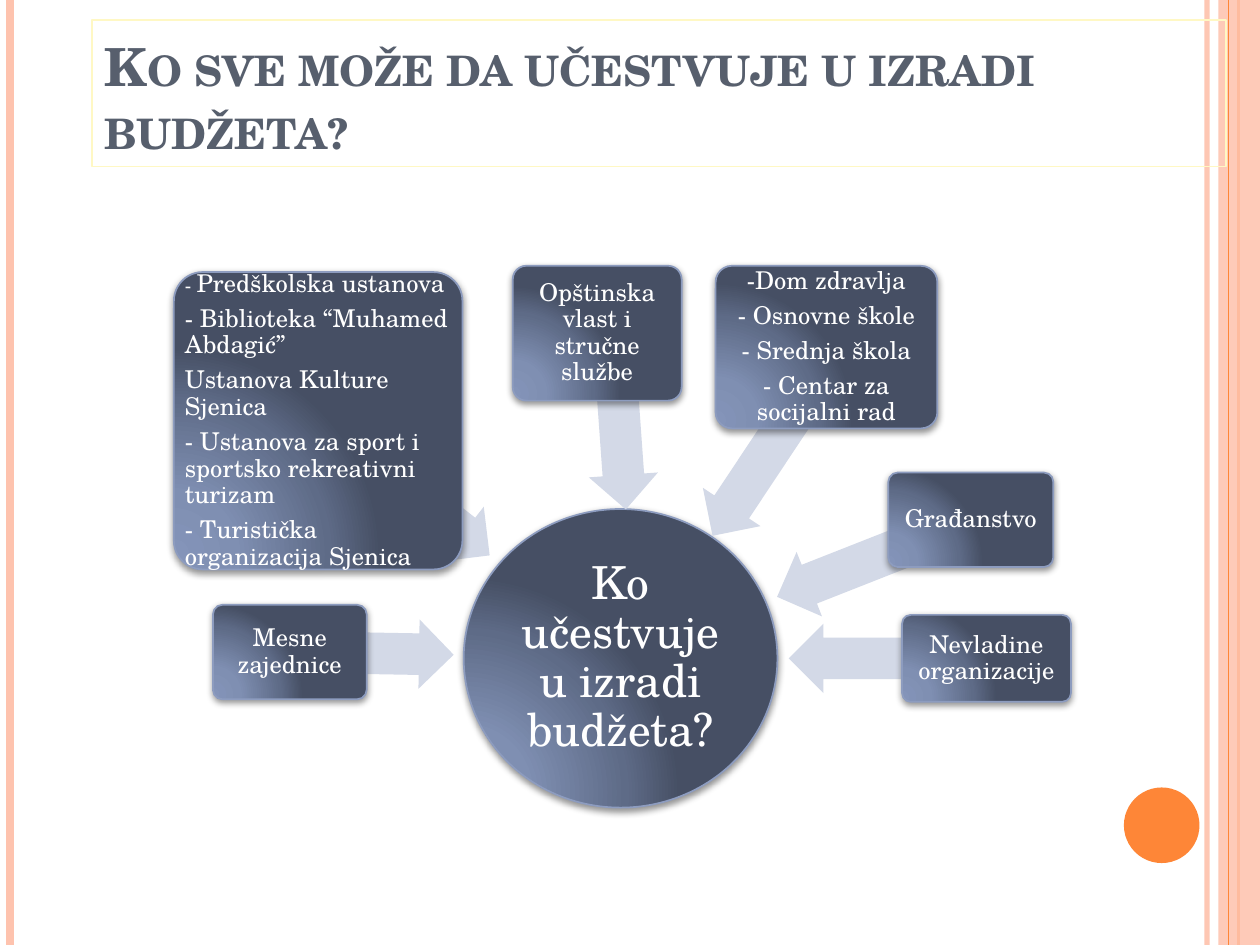
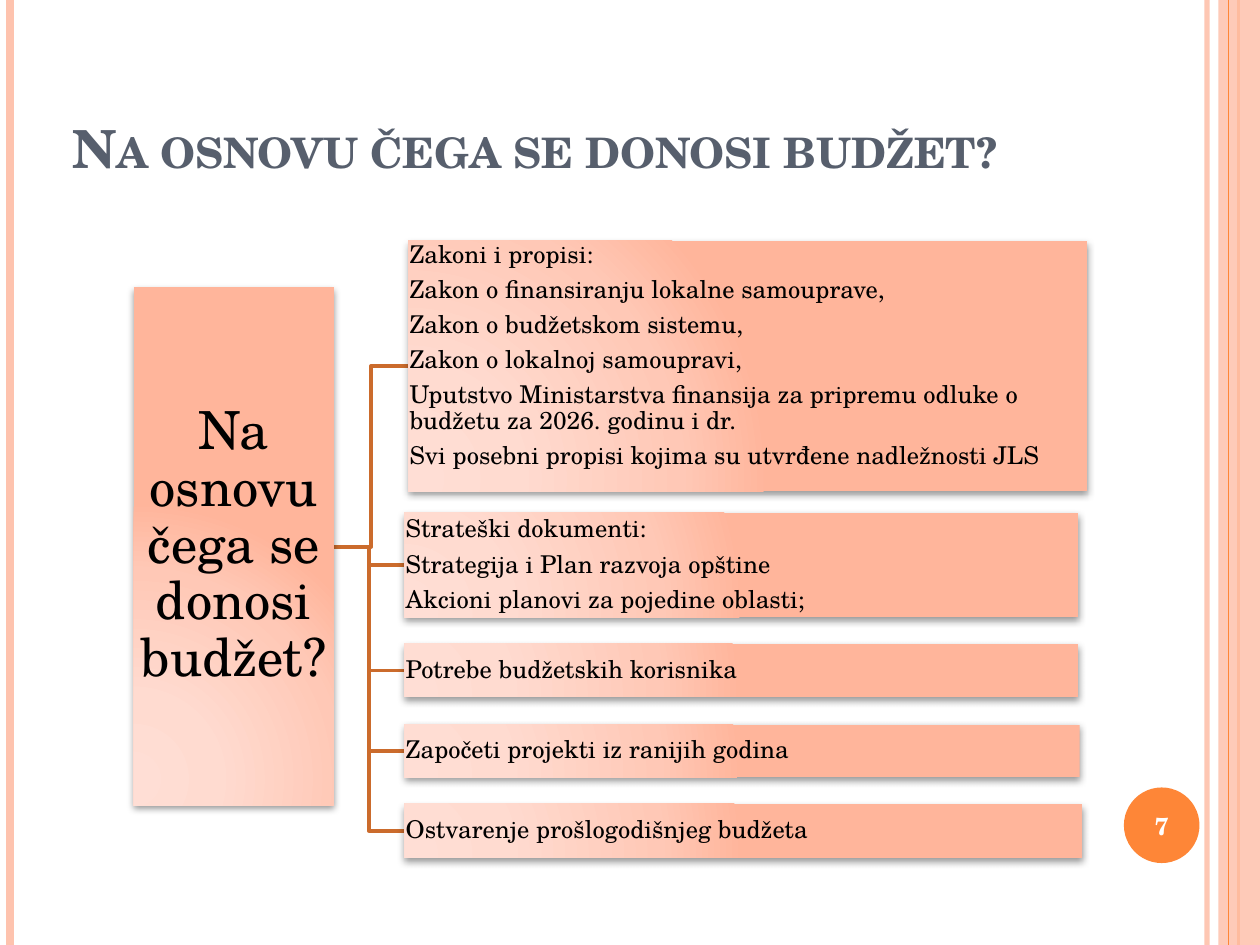
import pptx
import pptx.dml.color
import pptx.enum.shapes
import pptx.enum.text
import pptx.oxml
import pptx.oxml.ns
import pptx.util

Inches = pptx.util.Inches
Pt = pptx.util.Pt
RGB = pptx.dml.color.RGBColor
SHAPE = pptx.enum.shapes.MSO_SHAPE
ANCHOR = pptx.enum.text.MSO_ANCHOR
ALIGN = pptx.enum.text.PP_ALIGN

FONT = "TeX Gyre Schola"
ORANGE = RGB(0xFE, 0x86, 0x37)
PEACH = RGB(0xFE, 0xC3, 0xAE)
CREAM = RGB(0xFF, 0xF8, 0xC4)
SLATE = RGB(0x57, 0x5F, 0x6D)
WHITE = RGB(0xFF, 0xFF, 0xFF)
BLACK = RGB(0x00, 0x00, 0x00)
RUST = RGB(0xCB, 0x6B, 0x2C)
STEEL = RGB(0x8D, 0x9C, 0xBF)
ARROW = RGB(0xD3, 0xD9, 0xE7)
STOPS = (0, 30, 75, 100)
NAVY_GLOW = [RGB(0x84, 0x94, 0xB9), RGB(0x7F, 0x8F, 0xB2),
             RGB(0x5E, 0x6B, 0x87), RGB(0x46, 0x4F, 0x64)]
PEACH_GLOW = [RGB(0xFF, 0xDE, 0xD5), RGB(0xFF, 0xDB, 0xD0),
              RGB(0xFF, 0xC8, 0xB6), RGB(0xFF, 0xB5, 0x9B)]


def xml(source):
    return pptx.oxml.parse_xml(source.replace(">", f" {pptx.oxml.ns.nsdecls('a')}>", 1))


def set_alpha(parent, percent):
    for clr in parent.iter(pptx.oxml.ns.qn("a:srgbClr")):
        clr.append(xml(f'<a:alpha val="{percent * 1000}"></a:alpha>'))


def write(sp, paragraphs, size=14, color=WHITE, bold=False, small_caps=False,
          align=ALIGN.LEFT, anchor=ANCHOR.MIDDLE, margins=(0.02, 0.02),
          line_spacing=0.9, space_after=0.35):
    """Fill a shape; a paragraph is a string or a list of (text, size) runs."""
    tf = sp.text_frame
    tf.word_wrap = True
    tf.vertical_anchor = anchor
    tf.margin_left = tf.margin_right = Inches(margins[0])
    tf.margin_top = tf.margin_bottom = Inches(margins[1])
    for i, runs in enumerate(paragraphs):
        p = tf.paragraphs[0] if i == 0 else tf.add_paragraph()
        p.alignment = align
        p.line_spacing = line_spacing
        p.space_after = Pt(size * space_after)
        for text, run_size in [(runs, size)] if isinstance(runs, str) else runs:
            r = p.add_run()
            r.text = text
            r.font.name = FONT
            r.font.size = Pt(run_size)
            r.font.bold = bold
            r.font.color.rgb = color
            if small_caps:
                r._r.get_or_add_rPr().set("cap", "small")


class Deck:
    """Holds the presentation, its shared style and the current slide."""

    def __init__(self):
        self.prs = pptx.Presentation()
        self.prs.slide_width = Inches(10)
        self.prs.slide_height = Inches(7.5)

    def add_slide(self, number=None):
        self.s = self.prs.slides.add_slide(self.prs.slide_layouts[6])
        self.rule(9.58, PEACH, 3, alpha=93)
        self.rule(0.08, PEACH, 4.5)
        self.rule(9.83, ORANGE, 1.5)
        band = self.shape(SHAPE.RECTANGLE, (9.67, 0, 0.33, 7.5), PEACH)
        set_alpha(band._element.spPr, 87)
        self.rule(9.75, ORANGE, 0.75)
        badge = self.shape(SHAPE.OVAL, (8.92, 6.25, 0.6, 0.6), ORANGE)
        if number:
            write(badge, [number], bold=True, align=ALIGN.CENTER, line_spacing=1)

    def rule(self, x, color, width, alpha=None):
        """Draw a vertical line over the full height of the slide."""
        line = self.s.shapes.add_connector(
            pptx.enum.shapes.MSO_CONNECTOR.STRAIGHT,
            Inches(x), 0, Inches(x), self.prs.slide_height)
        line.line.color.rgb = color
        line.line.width = Pt(width)
        if alpha:
            set_alpha(line._element.spPr, alpha)
        line._element.spPr.append(xml("<a:effectLst></a:effectLst>"))

    def shape(self, kind, box, fill=None, line=None, width=1):
        sp = self.s.shapes.add_shape(kind, *map(Inches, box))
        self.style(sp, fill, line, width)
        return sp

    def style(self, sp, fill, line, width):
        sp.shadow.inherit = False
        if fill is None:
            sp.fill.background()
        else:
            sp.fill.solid()
            sp.fill.fore_color.rgb = fill
        if line is None:
            sp.line.fill.background()
        else:
            sp.line.color.rgb = line
            sp.line.width = Pt(width)

    def glow_box(self, kind, box, colors, line=None, shadow=(40, 2)):
        """Add a shape lit from its lower left corner, with a soft shadow."""
        sp = self.shape(kind, box, line=line)
        stops = "".join(
            f'<a:gs pos="{pos * 1000}"><a:srgbClr val="{color}"/></a:gs>'
            for pos, color in zip(STOPS, colors))
        spPr = sp._element.spPr
        spPr.replace(spPr.find(pptx.oxml.ns.qn("a:noFill")), xml(
            f'<a:gradFill rotWithShape="1"><a:gsLst>{stops}</a:gsLst>'
            '<a:path path="circle"><a:fillToRect l="5000" t="100000" '
            'r="120000" b="10000"/></a:path></a:gradFill>'))
        alpha, distance = shadow
        spPr.find(pptx.oxml.ns.qn("a:effectLst")).append(xml(
            f'<a:outerShdw blurRad="{Pt(4)}" dist="{Pt(distance)}" '
            'dir="5400000" rotWithShape="0"><a:srgbClr val="000000">'
            f'<a:alpha val="{alpha * 1000}"/></a:srgbClr></a:outerShdw>'))
        return sp

    def navy_box(self, kind, box, paragraphs, **fmt):
        sp = self.glow_box(kind, box, NAVY_GLOW, STEEL, shadow=(42, 1.6))
        if kind == SHAPE.ROUNDED_RECTANGLE:
            sp.adjustments[0] = 0.1
        write(sp, paragraphs, **fmt)

    def arrow(self, box, angle):
        sp = self.shape(SHAPE.LEFT_ARROW, box, ARROW)
        sp.adjustments[0], sp.adjustments[1] = 0.6, 0.5
        sp.rotation = angle

    def elbow(self, start, end):
        """Draw a line that turns twice, halfway between start and end."""
        (x1, y1), (x2, y2) = start, end
        mid = (x1 + x2) / 2
        fb = self.s.shapes.build_freeform(Inches(x1), Inches(y1))
        fb.add_line_segments([(Inches(x), Inches(y)) for x, y in
                              ((mid, y1), (mid, y2), (x2, y2))], close=False)
        self.style(fb.convert_to_shape(), None, RUST, 2)

    def title(self, text, box, line=None):
        sp = self.s.shapes.add_textbox(*map(Inches, box))
        if line is not None:
            sp.line.color.rgb = line
            sp.line.width = Pt(0.75)
        write(sp, [text], size=30, color=SLATE, bold=True, small_caps=True,
              anchor=ANCHOR.BOTTOM, margins=(0.1, 0.05), line_spacing=1,
              space_after=0)


def participants_slide(deck):
    deck.add_slide()
    deck.title("Ko sve može da učestvuje u izradi budžeta?",
               (0.73, 0.16, 9, 1.16), CREAM)
    deck.navy_box(SHAPE.OVAL, (3.68, 4.04, 2.49, 2.37),
                  ["Ko učestvuje u izradi budžeta?"], size=26, align=ALIGN.CENTER)
    institutions = [
        [("- ", 11), ("Predškolska ustanova", 14)],
        "- Biblioteka “Muhamed Abdagić”",
        "Ustanova Kulture Sjenica",
        "- Ustanova za sport i sportsko rekreativni turizam",
        "- Turistička organizacija Sjenica",
    ]
    services = ["-Dom zdravlja", "- Osnovne škole", "- Srednja škola",
                "- Centar za socijalni rad"]
    # arrow left, top, length, angle; box; paragraphs; alignment
    participants = [
        (2.3, 4.91, 1.3, 181, (1.69, 4.8, 1.22, 0.75),
         ["Mesne zajednice"], ALIGN.CENTER),
        (2.34, 3.6, 1.73, 218, (1.38, 2.16, 2.29, 2.36),
         institutions, ALIGN.LEFT),
        (4.26, 3.11, 1.32, 265.9, (4.07, 2.11, 1.34, 1.07),
         ["Opštinska vlast i stručne službe"], ALIGN.CENTER),
        (5.26, 3.24, 1.77, 303.6, (5.68, 2.11, 1.76, 1.29),
         services, ALIGN.CENTER),
        (6.11, 4.16, 1.65, 338.5, (7.05, 3.75, 1.31, 0.75),
         ["Građanstvo"], ALIGN.CENTER),
        (6.26, 4.95, 1.57, 0, (7.16, 4.88, 1.34, 0.69),
         ["Nevladine organizacije"], ALIGN.CENTER),
    ]
    for left, top, length, angle, box, paragraphs, align in participants:
        deck.arrow((left, top, length, 0.55), angle)
        deck.navy_box(SHAPE.ROUNDED_RECTANGLE, box, paragraphs, align=align)


def basis_slide(deck):
    deck.add_slide("7")
    deck.title("Na osnovu čega se donosi budžet?", (0.48, 0.54, 9, 0.93))
    laws = [
        "Zakoni i propisi:",
        "Zakon o finansiranju lokalne samouprave,",
        "Zakon o budžetskom sistemu,",
        "Zakon o lokalnoj samoupravi,",
        "Uputstvo Ministarstva finansija za pripremu odluke o budžetu "
        "za 2026. godinu i dr.",
        "Svi posebni propisi kojima su utvrđene nadležnosti JLS",
    ]
    strategies = ["Strateški dokumenti:", "Strategija i Plan razvoja opštine",
                  "Akcioni planovi za pojedine oblasti;"]
    sources = [
        ((3.24, 1.91, 5.39, 1.99), laws, ANCHOR.TOP),
        ((3.21, 4.07, 5.35, 0.83), strategies, ANCHOR.MIDDLE),
        ((3.21, 5.11, 5.35, 0.42), ["Potrebe budžetskih korisnika"], ANCHOR.MIDDLE),
        ((3.21, 5.75, 5.36, 0.42), ["Započeti projekti iz ranijih godina"],
         ANCHOR.MIDDLE),
        ((3.21, 6.38, 5.38, 0.43), ["Ostvarenje prošlogodišnjeg budžeta"],
         ANCHOR.MIDDLE),
    ]
    for (left, top, _, height), _, _ in reversed(sources):
        deck.elbow((2.65, 4.34), (left, top + height / 2))
    question = deck.glow_box(SHAPE.RECTANGLE, (1.06, 2.28, 1.59, 4.11), PEACH_GLOW)
    write(question, ["Na osnovu čega se donosi budžet?"], size=30, color=BLACK,
          align=ALIGN.CENTER)
    for box, paragraphs, anchor in sources:
        sp = deck.glow_box(SHAPE.RECTANGLE, box, PEACH_GLOW)
        write(sp, paragraphs, color=BLACK, anchor=anchor, margins=(0.01, 0.01))


def main():
    deck = Deck()
    participants_slide(deck)
    basis_slide(deck)
    deck.prs.save("out.pptx")


if __name__ == "__main__":
    main()
